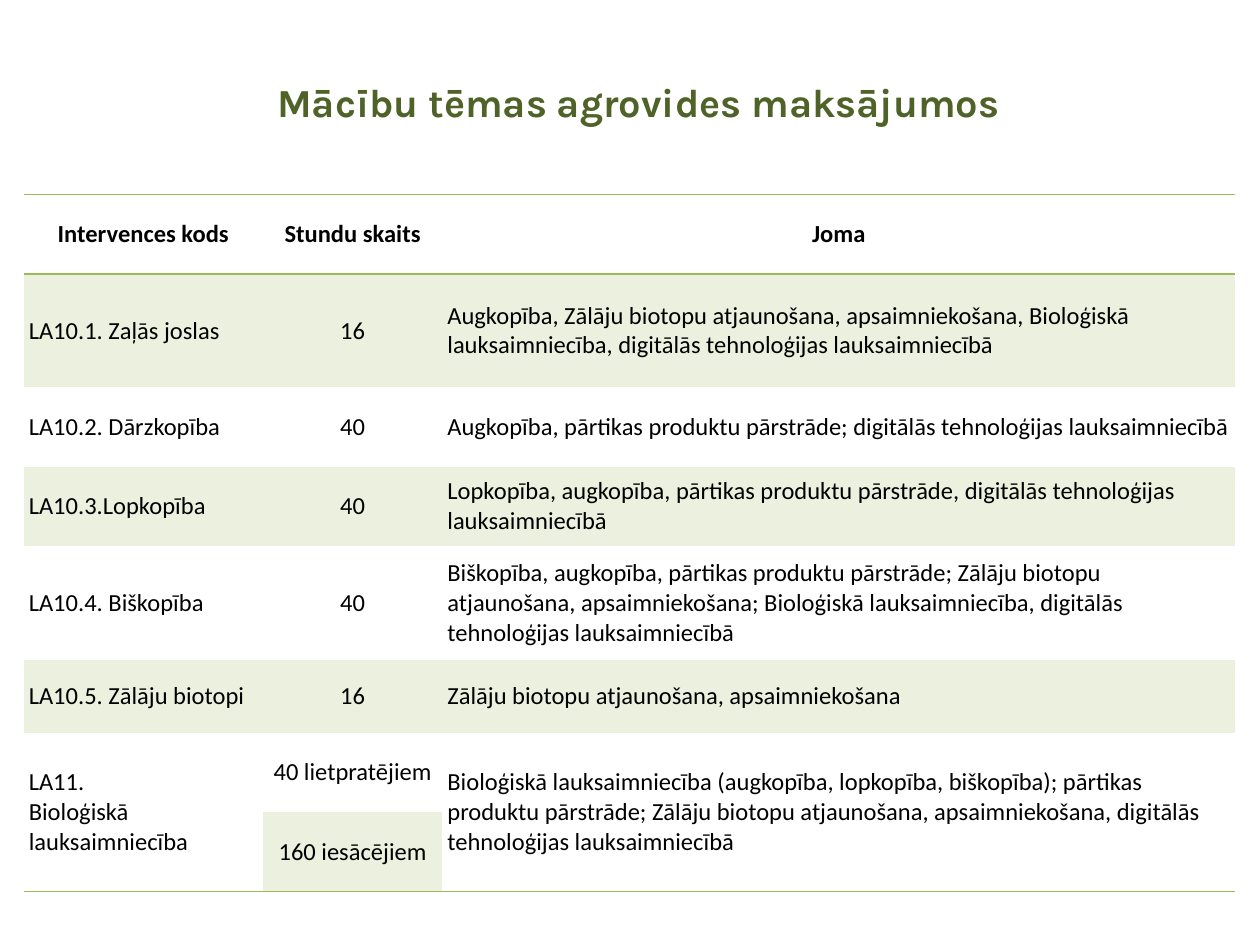
from lxml.etree import SubElement
from pptx import Presentation
from pptx.dml.color import RGBColor
from pptx.enum.text import MSO_ANCHOR as Anchor, PP_ALIGN as Align
from pptx.oxml import parse_xml
from pptx.oxml.ns import nsdecls, qn
from pptx.util import Cm, Pt

DARK_GREEN = RGBColor(0x4F, 0x62, 0x28)
GREEN = RGBColor(0x9B, 0xBB, 0x59)
PALE_GREEN = RGBColor(0xEB, 0xF1, 0xDE)
BLACK = RGBColor(0, 0, 0)

PLAIN_STYLE = "{2D5ABB26-0587-4C30-8999-92F81FD0307C}"
COLUMN_WIDTHS = [4.82, 3.62, 15.98]
ROW_HEIGHTS = [1.6, 2.29, 1.6, 1.6, 2.29, 1.47, 1.6, 1.6]
ROWS = [
    ("Intervences kods", "Stundu skaits", "Joma"),
    ("LA10.1. Zaļās joslas", "16",
     "Augkopība, Zālāju biotopu atjaunošana, apsaimniekošana, Bioloģiskā "
     "lauksaimniecība, digitālās tehnoloģijas lauksaimniecībā"),
    ("LA10.2. Dārzkopība", "40",
     "Augkopība, pārtikas produktu pārstrāde; digitālās tehnoloģijas lauksaimniecībā"),
    ("LA10.3.Lopkopība", "40",
     "Lopkopība, augkopība, pārtikas produktu pārstrāde, digitālās tehnoloģijas "
     "lauksaimniecībā"),
    ("LA10.4. Biškopība", "40",
     "Biškopība, augkopība, pārtikas produktu pārstrāde; Zālāju biotopu atjaunošana, "
     "apsaimniekošana; Bioloģiskā lauksaimniecība, digitālās tehnoloģijas lauksaimniecībā"),
    ("LA10.5. Zālāju biotopi", "16", "Zālāju biotopu atjaunošana, apsaimniekošana"),
    ("LA11.\nBioloģiskā lauksaimniecība", "40 lietpratējiem",
     "Bioloģiskā lauksaimniecība (augkopība, lopkopība, biškopība); pārtikas produktu "
     "pārstrāde; Zālāju biotopu atjaunošana, apsaimniekošana, digitālās tehnoloģijas "
     "lauksaimniecībā"),
    ("", "160 iesācējiem", ""),
]
LAST_ROW = len(ROWS) - 1


def set_borders(cell, sides):
    """Draw thin green lines on the given sides, T before B."""
    properties = cell._tc.get_or_add_tcPr()
    for position, side in enumerate(sides):
        line = parse_xml(f'<a:ln{side} {nsdecls("a")} w="{Pt(1)}"/>')
        fill = SubElement(line, qn("a:solidFill"))
        SubElement(fill, qn("a:srgbClr"), val=str(GREEN))
        properties.insert(position, line)


def format_cell(cell, text, row, column):
    cell.text_frame.text = text
    cell.vertical_anchor = Anchor.MIDDLE
    cell.margin_left = cell.margin_right = Cm(0.1)
    cell.margin_top = cell.margin_bottom = Cm(0.1)
    for paragraph in cell.text_frame.paragraphs:
        paragraph.alignment = Align.CENTER if row == 0 or column == 1 else Align.LEFT
        font = paragraph.font
        font.name, font.size, font.bold = "Calibri", Pt(14), row == 0
        font.color.rgb = BLACK

    # Odd rows are banded, except where the last topic spans two rows
    if row % 2 and (row < LAST_ROW or column == 1):
        cell.fill.solid()
        cell.fill.fore_color.rgb = PALE_GREEN
    else:
        cell.fill.background()

    if row == 0:
        set_borders(cell, "TB")
    elif row == LAST_ROW or cell.is_merge_origin:
        set_borders(cell, "B")


def add_title(slide, left, top, width, height):
    box = slide.shapes.add_textbox(left, top, width, height)
    frame = box.text_frame
    frame.word_wrap = True
    frame.vertical_anchor = Anchor.MIDDLE
    frame.margin_left = frame.margin_right = Cm(0.18)
    frame.margin_top = frame.margin_bottom = Cm(0.1)
    paragraph = frame.paragraphs[0]
    paragraph.text = "Mācību tēmas agrovides maksājumos"
    paragraph.line_spacing = 0.9
    font = paragraph.font
    font.name, font.size, font.bold = "Karla", Pt(22.7), True
    font.color.rgb = DARK_GREEN


def add_topics_table(slide, left, top, width, height):
    frame = slide.shapes.add_table(len(ROWS), len(COLUMN_WIDTHS), left, top, width, height)
    table = frame.table
    table.first_row = table.horz_banding = False
    table._tbl.tblPr.find(qn("a:tableStyleId")).text = PLAIN_STYLE
    for column, share in zip(table.columns, COLUMN_WIDTHS):
        column.width = int(width * share / sum(COLUMN_WIDTHS))
    for row, share in zip(table.rows, ROW_HEIGHTS):
        row.height = int(height * share / sum(ROW_HEIGHTS))

    # The last topic covers two rows of hours
    for column in (0, 2):
        table.cell(LAST_ROW - 1, column).merge(table.cell(LAST_ROW, column))

    for row, texts in enumerate(ROWS):
        for column, text in enumerate(texts):
            format_cell(table.cell(row, column), text, row, column)


def main():
    presentation = Presentation()
    presentation.slide_width, presentation.slide_height = Cm(25.4), Cm(19.05)
    slide = presentation.slides.add_slide(presentation.slide_layouts[6])
    add_title(slide, Cm(5.41), Cm(1.52), Cm(19.79), Cm(1.19))
    add_topics_table(slide, Cm(0.48), Cm(3.92), Cm(24.42), Cm(14.05))
    presentation.save("out.pptx")


if __name__ == "__main__":
    main()
